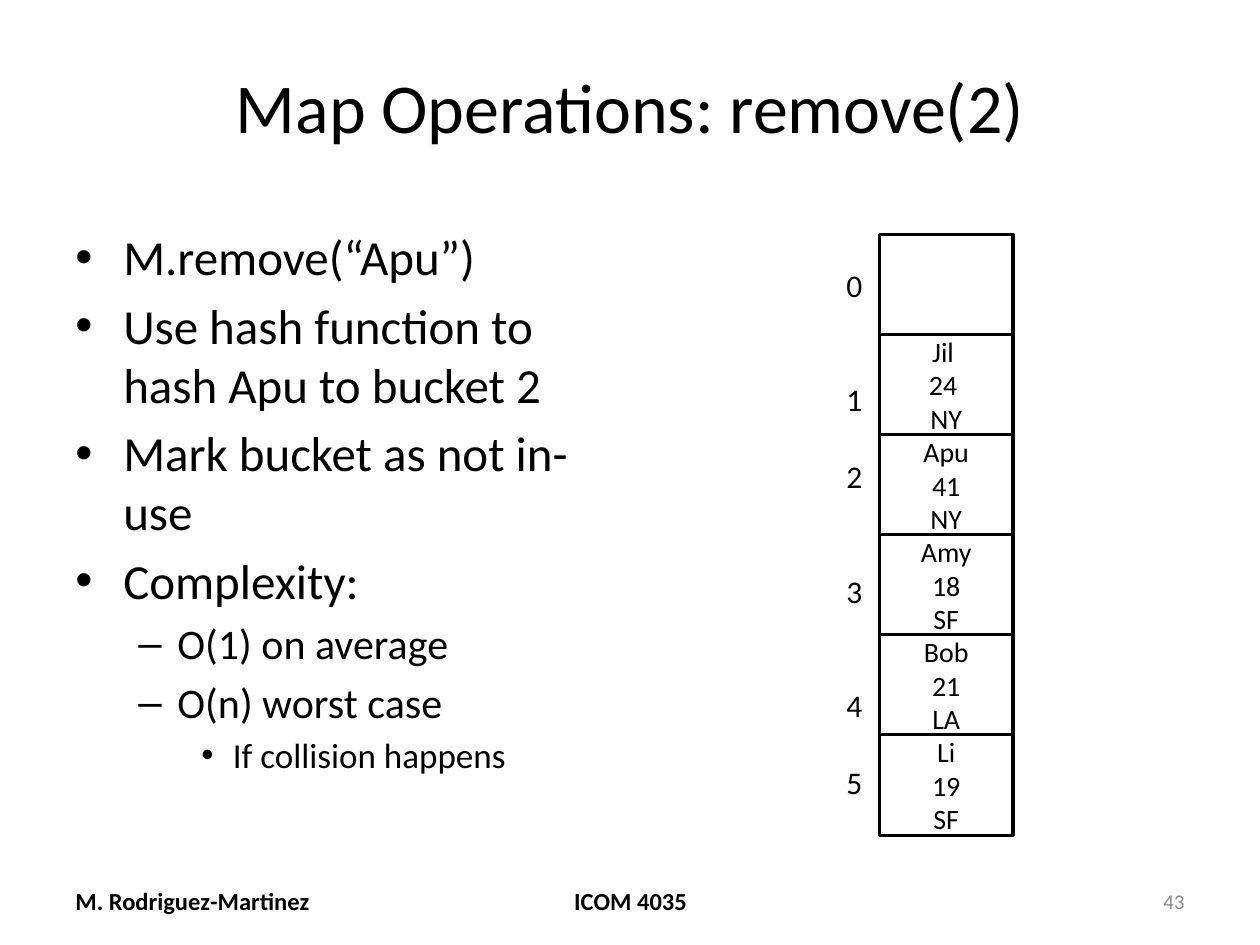
from lxml import etree
from pptx import Presentation
from pptx import util as u
from pptx.dml.color import RGBColor
from pptx.enum import shapes, text
from pptx.oxml import ns

BLACK, WHITE, GRAY = "000000", "FFFFFF", "8C8C8C"
LEFT, CENTER, RIGHT = text.PP_ALIGN.LEFT, text.PP_ALIGN.CENTER, text.PP_ALIGN.RIGHT
TOP, MIDDLE = text.MSO_ANCHOR.TOP, text.MSO_ANCHOR.MIDDLE

LEVELS = [(28, 0.38, 0.38, "•"), (24, 0.81, 0.31, "–"), (20, 1.25, 0.25, "•")]
POINTS = [
    (0, "M.remove(“Apu”)"),
    (0, "Use hash function to hash Apu to bucket 2"),
    (0, "Mark bucket as not in-use"),
    (0, "Complexity:"),
    (1, "O(1) on average"),
    (1, "O(n) worst case"),
    (2, "If collision happens"),
]
BUCKETS = [
    [],
    ["Jil ", "24 ", "NY"],
    ["Apu", "41", "NY"],
    ["Amy", "18", "SF"],
    ["Bob", "21", "LA"],
    ["Li", "19", "SF"],
]
INDEX_GAPS = [0, 44, 22, 44, 44, 22]
BUCKET_TOP, BUCKET_PITCH = 1.86, 3.97 / 5


def color(value):
    return RGBColor.from_string(value)


class SlideBuilder:
    font = "Calibri"

    def __init__(self, presentation):
        self.slide = presentation.slides.add_slide(presentation.slide_layouts[5])

    def add_run(self, paragraph, words, size, fill=BLACK, bold=False):
        run = paragraph.add_run()
        run.text = words
        run.font.name = self.font
        run.font.size = u.Pt(size)
        run.font.bold = bold
        run.font.color.rgb = color(fill)

    def add_paragraphs(self, frame, lines, size, align=LEFT, fill=BLACK, bold=False):
        for number, words in enumerate(lines):
            paragraph = frame.add_paragraph() if number else frame.paragraphs[0]
            paragraph.alignment = align
            self.add_run(paragraph, words, size, fill, bold)

    def title(self, words, box):
        shape = self.slide.shapes.title
        shape.left, shape.top, shape.width, shape.height = map(u.Inches, box)
        frame = shape.text_frame
        frame.auto_size = text.MSO_AUTO_SIZE.NONE
        frame.vertical_anchor = MIDDLE
        self.add_paragraphs(frame, [words], 40, CENTER)

    def text_box(self, lines, box, size, align=LEFT, fill=BLACK, bold=False,
                 anchor=MIDDLE, wrap=True):
        frame = self.slide.shapes.add_textbox(*map(u.Inches, box)).text_frame
        frame.word_wrap = wrap
        frame.vertical_anchor = anchor
        self.add_paragraphs(frame, lines, size, align, fill, bold)
        return frame

    def bullets(self, points, box):
        frame = self.text_box([], box, 28, anchor=TOP)
        for number, (level, words) in enumerate(points):
            size, margin, hanging, mark = LEVELS[level]
            paragraph = frame.add_paragraph() if number else frame.paragraphs[0]
            paragraph.level = level
            paragraph.space_before = u.Pt(size * 0.2)
            self.add_run(paragraph, words, size)
            properties = paragraph._p.get_or_add_pPr()
            properties.set("marL", str(u.Inches(margin)))
            properties.set("indent", str(-u.Inches(hanging)))
            etree.SubElement(properties, ns.qn("a:buFont")).set("typeface", "Arial")
            etree.SubElement(properties, ns.qn("a:buChar")).set("char", mark)

    def bucket(self, lines, box):
        shape = self.slide.shapes.add_shape(
            shapes.MSO_SHAPE.RECTANGLE, *map(u.Inches, box))
        shape.shadow.inherit = False
        shape.fill.solid()
        shape.fill.fore_color.rgb = color(WHITE)
        shape.line.color.rgb = color(BLACK)
        shape.line.width = u.Pt(2)
        shape.text_frame.vertical_anchor = MIDDLE
        self.add_paragraphs(shape.text_frame, lines, 16, CENTER)

    def indexes(self, gaps, box):
        frame = self.text_box(map(str, range(len(gaps))), box, 18, anchor=TOP, wrap=False)
        frame.auto_size = text.MSO_AUTO_SIZE.SHAPE_TO_FIT_TEXT
        for paragraph, gap in zip(frame.paragraphs, gaps):
            paragraph.space_before = u.Pt(gap)


def main():
    presentation = Presentation()
    presentation.slide_width = u.Inches(10)
    presentation.slide_height = u.Inches(7.5)
    builder = SlideBuilder(presentation)
    builder.title("Map Operations: remove(2)", (0.5, 0.3, 9, 1.07))
    builder.bullets(POINTS, (0.5, 1.75, 4.42, 4.95))
    builder.text_box(["M. Rodriguez-Martinez"], (0.5, 6.95, 2.33, 0.4), 14, bold=True)
    builder.text_box(["ICOM 4035"], (3.42, 6.95, 3.17, 0.4), 14, CENTER, bold=True)
    builder.text_box(["43"], (7.17, 6.95, 2.33, 0.4), 12, RIGHT, GRAY)
    for number, lines in enumerate(BUCKETS):
        builder.bucket(lines, (6.98, BUCKET_TOP + number * BUCKET_PITCH, 1.06, 0.8))
    builder.indexes(INDEX_GAPS, (6.62, 2.06, 0.33, 4.34))
    presentation.save("out.pptx")


if __name__ == "__main__":
    main()
